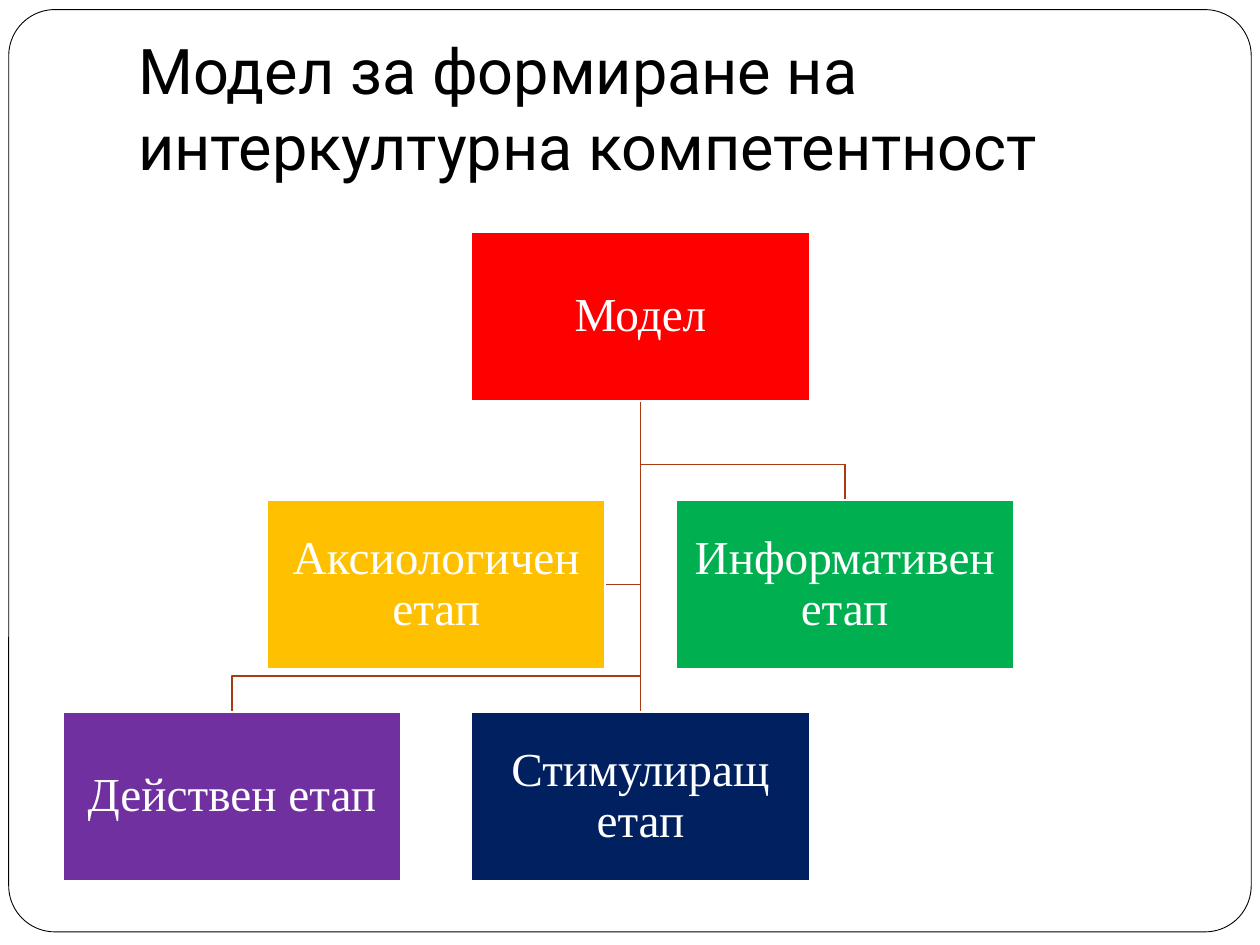
import pptx
import pptx.dml.color
import pptx.enum.shapes
import pptx.enum.text
import pptx.util
from lxml import etree
from pptx.oxml.ns import qn

Pt = pptx.util.Pt
RGBColor = pptx.dml.color.RGBColor
SHAPE = pptx.enum.shapes.MSO_SHAPE
ANCHOR = pptx.enum.text.MSO_ANCHOR
CENTER = pptx.enum.text.PP_ALIGN.CENTER

BLACK = RGBColor(0x00, 0x00, 0x00)
WHITE = RGBColor(0xFF, 0xFF, 0xFF)
RED = RGBColor(0xFF, 0x00, 0x00)
GOLD = RGBColor(0xFF, 0xC0, 0x00)
GREEN = RGBColor(0x00, 0xB0, 0x50)
PURPLE = RGBColor(0x70, 0x30, 0xA0)
NAVY = RGBColor(0x00, 0x20, 0x60)
RUST = RGBColor(0xA9, 0x3A, 0x12)

STAGE_WIDTH, STAGE_HEIGHT = 193.2, 96.5
HALF_STEP = 116.7
ROWS = (0, 153.2, 274.2)
BRANCH_GAP = 20.3
STAGES = {
    "Модел": (2, 0, RED),
    "Действен етап": (0, 2, PURPLE),
    "Стимулиращ етап": (2, 2, NAVY),
    "Информативен етап": (3, 1, GREEN),
    "Аксиологичен етап": (1, 1, GOLD),
}
STAGE_FRAME = {
    "word_wrap": True,
    "vertical_anchor": ANCHOR.MIDDLE,
    "margin_left": Pt(1.35),
    "margin_right": Pt(1.35),
    "margin_top": Pt(1.35),
    "margin_bottom": Pt(1.35),
}
TITLE_FRAME = {
    "word_wrap": True,
    "vertical_anchor": ANCHOR.BOTTOM,
    "margin_left": Pt(7.2),
    "margin_right": Pt(7.2),
    "margin_top": Pt(3.6),
    "margin_bottom": Pt(7.2),
}
STAGE_FONT = {"name": "Times New Roman", "size": Pt(27)}
TITLE_FONT = {"name": "Roboto", "size": Pt(36)}


def apply(target, values):
    for key, value in values.items():
        setattr(target, key, value)


def write(frame, text, frame_format, font_format, color):
    apply(frame, frame_format)
    line = frame.paragraphs[0]
    run = line.add_run()
    run.text = text
    apply(run.font, font_format)
    run.font.color.rgb = color
    return line


def add_panel(slide, kind, box, fill, outline, width):
    panel = slide.shapes.add_shape(kind, *map(Pt, box))
    panel.shadow.inherit = False
    panel.fill.solid()
    panel.fill.fore_color.rgb = fill
    panel.line.color.rgb = outline
    panel.line.width = Pt(width)
    return panel


def add_border(slide, box):
    border = add_panel(slide, SHAPE.ROUNDED_RECTANGLE, box, WHITE, BLACK, 0.5)
    border.adjustments[0] = 0.05


def add_title(slide, box):
    title = slide.shapes.add_textbox(*map(Pt, box))
    write(title.text_frame, "Модел за формиране на интеркултурна компетентност",
          TITLE_FRAME, TITLE_FONT, BLACK)


def add_branch(slide, points):
    start, *rest = [(Pt(x), Pt(y)) for x, y in points]
    builder = slide.shapes.build_freeform(*start)
    builder.add_line_segments(rest, close=False)
    branch = builder.convert_to_shape()
    branch.shadow.inherit = False
    branch.fill.background()
    branch.line.color.rgb = RUST
    branch.line.width = Pt(1)


def add_trunk(slide, start, end):
    trunk = slide.shapes.add_connector(
        pptx.enum.shapes.MSO_CONNECTOR.STRAIGHT, *map(Pt, start + end))
    trunk.line.color.rgb = RUST
    trunk.line.width = Pt(1)
    etree.SubElement(trunk.element.spPr, qn("a:effectLst"))
    return trunk


def add_stage(slide, text, box, color):
    stage = add_panel(slide, SHAPE.RECTANGLE, box, color, WHITE, 1)
    line = write(stage.text_frame, text, STAGE_FRAME, STAGE_FONT, WHITE)
    apply(line, {"alignment": CENTER, "line_spacing": 0.9})
    return stage


def add_hierarchy(slide, left, top):
    def center(column):
        return left + column * HALF_STEP + STAGE_WIDTH / 2

    root = (center(2), top + STAGE_HEIGHT)
    middle, bottom = top + ROWS[1], top + ROWS[2]
    side = middle + STAGE_HEIGHT / 2
    add_branch(slide, [root, (root[0], side), (center(1) + STAGE_WIDTH / 2, side)])
    trunk = add_trunk(slide, root, (root[0], bottom))
    for column, row_top in ((3, middle), (0, bottom)):
        bend = row_top - BRANCH_GAP
        add_branch(slide, [root, (root[0], bend), (center(column), bend),
                           (center(column), row_top)])

    stages = {}
    for text, (column, row, color) in STAGES.items():
        box = (left + column * HALF_STEP, top + ROWS[row], STAGE_WIDTH, STAGE_HEIGHT)
        stages[text] = add_stage(slide, text, box, color)
    trunk.begin_connect(stages["Модел"], 2)
    trunk.end_connect(stages["Стимулиращ етап"], 0)


def main():
    deck = pptx.Presentation()
    apply(deck, {"slide_width": Pt(720), "slide_height": Pt(540)})
    slide = deck.slides.add_slide(deck.slide_layouts[6])
    add_border(slide, (5, 5.5, 710, 527))
    add_title(slide, (72, 21.6, 612, 90))
    add_hierarchy(slide, 36, 132.6)
    deck.save("out.pptx")


if __name__ == "__main__":
    main()
